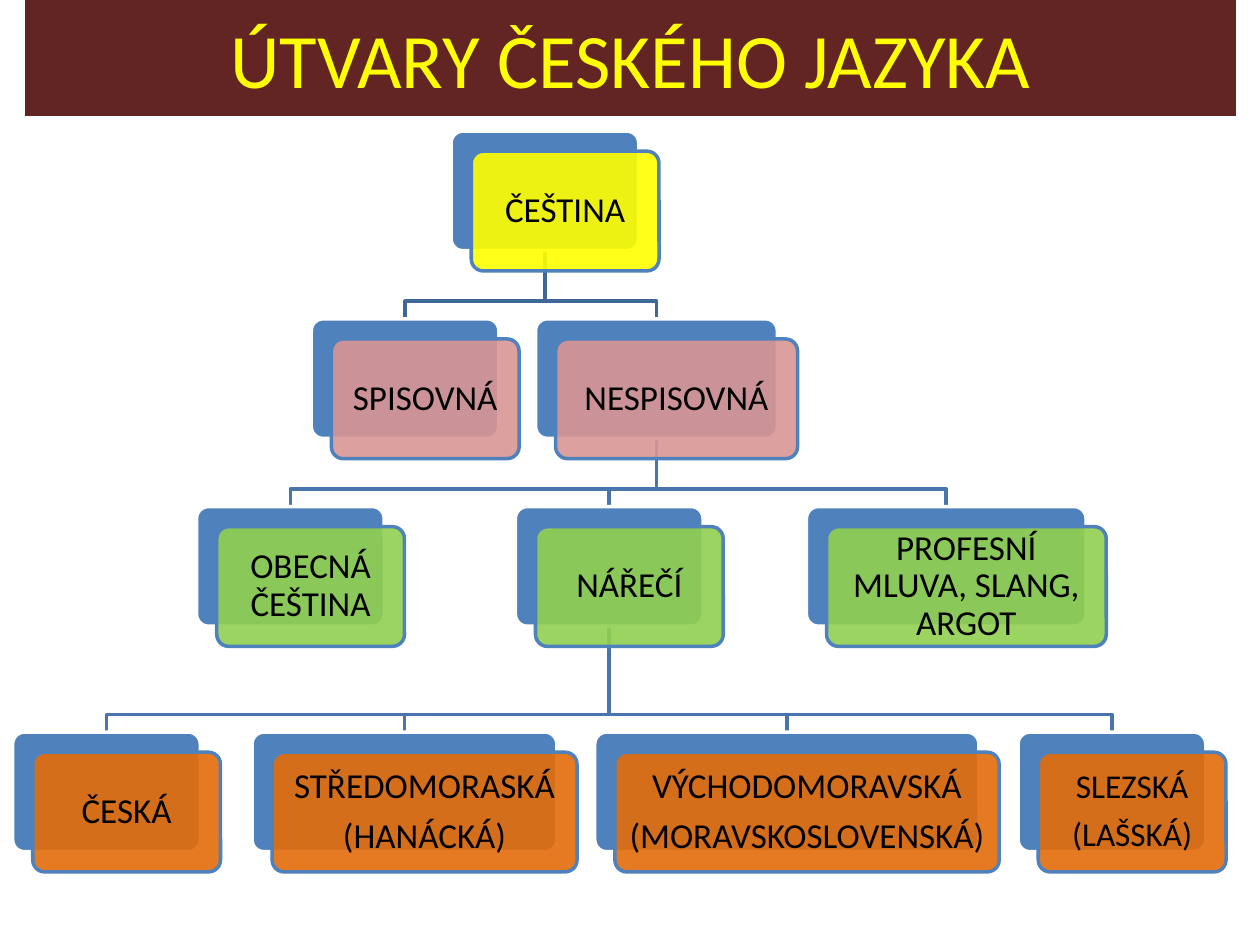
from dataclasses import dataclass

from lxml import etree
from pptx import Presentation
from pptx.dml.color import RGBColor
from pptx.enum import shapes, text
from pptx.oxml.ns import qn
from pptx.util import Inches, Pt

WHITE = RGBColor(0xFF, 0xFF, 0xFF)
BLACK = RGBColor(0x00, 0x00, 0x00)
MAROON = RGBColor(0x63, 0x25, 0x23)
YELLOW = RGBColor(0xFF, 0xFF, 0x00)
BLUE = RGBColor(0x4F, 0x81, 0xBD)
DARK_BLUE = RGBColor(0x3F, 0x67, 0x97)
MID_BLUE = RGBColor(0x48, 0x75, 0xAC)
PINK = RGBColor(0xD9, 0x96, 0x94)
GREEN = RGBColor(0x92, 0xD0, 0x50)
ORANGE = RGBColor(0xE4, 0x6C, 0x0A)

FONT = "Calibri"
NODE_HEIGHT = 0.95
CARD_OFFSET = 0.16
BUS_GAP = 0.14  # from the horizontal branch line down to the child


@dataclass
class Node:
    name: str
    parent: str
    left: float
    width: float
    lines: tuple
    size: int = 20

    @property
    def center(self):
        return self.left + self.width / 2


# Each level: top, card colour, colour of the branches leading to it, nodes
LEVELS = [
    (1.04, YELLOW, None, [
        Node("language", "", 3.58, 1.49, ("ČEŠTINA",)),
    ]),
    (2.53, PINK, DARK_BLUE, [
        Node("standard", "language", 2.47, 1.49, ("SPISOVNÁ",)),
        Node("nonstandard", "language", 4.25, 1.92, ("NESPISOVNÁ",)),
    ]),
    (4.02, GREEN, MID_BLUE, [
        Node("common", "nonstandard", 1.56, 1.49, ("OBECNÁ ČEŠTINA",)),
        Node("dialects", "nonstandard", 4.09, 1.49, ("NÁŘEČÍ",)),
        Node("slang", "nonstandard", 6.4, 2.22,
             ("PROFESNÍ MLUVA, SLANG, ARGOT",)),
    ]),
    (5.81, ORANGE, MID_BLUE, [
        Node("czech", "dialects", 0.1, 1.49, ("ČESKÁ",)),
        Node("central", "dialects", 2, 2.42, ("STŘEDOMORASKÁ", "(HANÁCKÁ)")),
        Node("eastern", "dialects", 4.72, 3.05,
             ("VÝCHODOMORAVSKÁ", "(MORAVSKOSLOVENSKÁ)")),
        Node("silesian", "dialects", 8.08, 1.49, ("SLEZSKÁ", "(LAŠSKÁ)"), 19),
    ]),
]


def add_box(slide, kind, box, fill, line=None):
    shape = slide.shapes.add_shape(kind, *(Inches(value) for value in box))
    shape.shadow.inherit = False
    shape.fill.solid()
    shape.fill.fore_color.rgb = fill
    if line is None:
        shape.line.fill.background()
    else:
        shape.line.color.rgb = line
        shape.line.width = Pt(2)
    return shape


def add_text(shape, lines, size, color, spacing=1.0, after=0):
    frame = shape.text_frame
    frame.word_wrap = True
    frame.vertical_anchor = text.MSO_ANCHOR.MIDDLE
    frame.margin_left = frame.margin_right = Inches(0.05)
    frame.margin_top = frame.margin_bottom = Inches(0.05)
    for index, line in enumerate(lines):
        paragraph = frame.add_paragraph() if index else frame.paragraphs[0]
        paragraph.alignment = text.PP_ALIGN.CENTER
        paragraph.line_spacing = spacing
        paragraph.space_after = Pt(after)
        run = paragraph.add_run()
        run.text = line
        run.font.name = FONT
        run.font.size = Pt(size)
        run.font.color.rgb = color


def set_opacity(shape, percent):
    color = shape.fill._xPr.find(qn("a:solidFill"))[0]
    etree.SubElement(color, qn("a:alpha"), val=str(percent * 1000))


def add_title(slide, box):
    banner = add_box(slide, shapes.MSO_SHAPE.RECTANGLE, box, MAROON)
    add_text(banner, ["ÚTVARY ČESKÉHO JAZYKA"], 44, YELLOW)


def add_branch(slide, start, end, color):
    bus = end[1] - BUS_GAP
    points = [(start[0], bus), (end[0], bus), end]
    builder = slide.shapes.build_freeform(
        Inches(start[0]), Inches(start[1]), scale=1.0)
    builder.add_line_segments(
        [(Inches(x), Inches(y)) for x, y in points], close=False)
    branch = builder.convert_to_shape()
    branch.shadow.inherit = False
    branch.fill.background()
    branch.line.color.rgb = color
    branch.line.width = Pt(2)


def add_node(slide, node, box, color):
    left, top, width, height = box
    card_box = (left + CARD_OFFSET, top + CARD_OFFSET, width, height)
    rounded = shapes.MSO_SHAPE.ROUNDED_RECTANGLE
    back = add_box(slide, rounded, box, BLUE, WHITE)
    card = add_box(slide, rounded, card_box, color, BLUE)
    for shape in (back, card):
        shape.adjustments[0] = 0.1
    set_opacity(card, 90)
    add_text(card, node.lines, node.size, BLACK, spacing=0.9, after=7)


def add_tree(slide):
    # Branches lie behind all nodes
    bottoms = {}
    for top, _, branch_color, nodes in LEVELS:
        for node in nodes:
            if node.parent:
                add_branch(slide, bottoms[node.parent],
                           (node.center, top), branch_color)
            bottoms[node.name] = (node.center, top + NODE_HEIGHT)
    # Nodes
    for top, color, _, nodes in LEVELS:
        for node in nodes:
            add_node(slide, node,
                     (node.left, top, node.width, NODE_HEIGHT), color)


def main():
    presentation = Presentation()
    presentation.slide_width = Inches(10)
    presentation.slide_height = Inches(7.5)
    slide = presentation.slides.add_slide(presentation.slide_layouts[6])
    add_title(slide, (0.2, 0, 9.61, 0.92))
    add_tree(slide)
    presentation.save("out.pptx")


if __name__ == "__main__":
    main()
